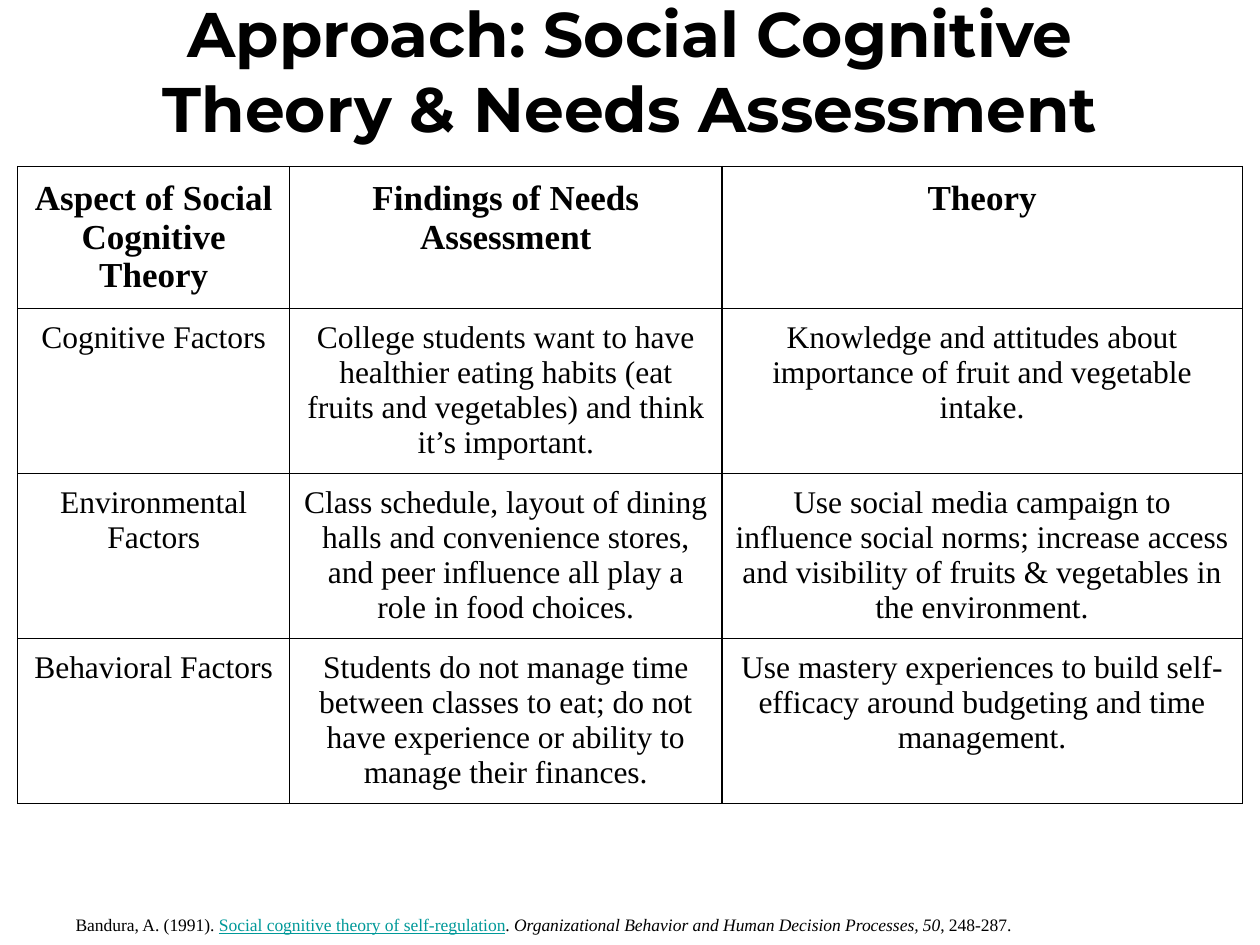
from lxml.etree import SubElement
from pptx import Presentation
from pptx.dml.color import RGBColor
from pptx.enum.text import MSO_ANCHOR, MSO_AUTO_SIZE, PP_ALIGN
from pptx.oxml.ns import qn
from pptx.util import Inches, Pt

COLORS = {"text": "000000", "link": "009999"}
SERIF = "Times New Roman"
COLUMN_WIDTHS = [2.16, 3.43, 4.13]
ROW_HEIGHTS = [1.12, 1.31, 1.31, 1.31]
ROWS = [
    ["Aspect of Social Cognitive Theory", "Findings of Needs Assessment", "Theory"],
    ["Cognitive Factors",
     "College students want to have healthier eating habits (eat fruits and vegetables) "
     "and think it’s important.",
     "Knowledge and attitudes about importance of fruit and vegetable intake."],
    ["Environmental Factors",
     "Class schedule, layout of dining halls and convenience stores, and peer influence "
     "all play a role in food choices.",
     "Use social media campaign to influence social norms; increase access and visibility "
     "of fruits & vegetables in the environment."],
    ["Behavioral Factors",
     "Students do not manage time between classes to eat; do not have experience or "
     "ability to manage their finances.",
     "Use mastery experiences to build self-efficacy around budgeting and time management."],
]
CITATION = [
    ("Bandura, A. (1991). ", "text", False),
    ("Social cognitive theory of self-regulation", "link", False),
    (". ", "text", False),
    ("Organizational Behavior and Human Decision Processes, 50", "text", True),
    (", 248-287.", "text", False),
]


def set_font(font, name, size, bold=False, color="text"):
    font.name, font.size, font.bold = name, Pt(size), bold
    font.color.rgb = RGBColor.from_string(COLORS[color])


def add_borders(cell):
    properties = cell._tc.get_or_add_tcPr()
    for position, side in enumerate(("lnL", "lnR", "lnT", "lnB")):
        line = properties.makeelement(qn(f"a:{side}"), {"w": str(Pt(0.75))})
        fill = SubElement(line, qn("a:solidFill"))
        SubElement(fill, qn("a:srgbClr"), val=COLORS["text"])
        properties.insert(position, line)


presentation = Presentation()
presentation.slide_width, presentation.slide_height = Inches(10), Inches(7.5)
slide = presentation.slides.add_slide(presentation.slide_layouts[1])

title = slide.shapes.title
title.left, title.top = Inches(0.5), Inches(0.05)
title.width, title.height = Inches(9), Inches(1.01)
title.text_frame.auto_size = MSO_AUTO_SIZE.NONE
title.text_frame.vertical_anchor = MSO_ANCHOR.MIDDLE
paragraph = title.text_frame.paragraphs[0]
paragraph.text = "Approach: Social Cognitive Theory & Needs Assessment"
paragraph.alignment = PP_ALIGN.CENTER
set_font(paragraph.font, "Montserrat", 36, bold=True)

table = slide.shapes.add_table(
    len(ROWS), len(COLUMN_WIDTHS), Inches(0.14), Inches(1.32),
    Inches(sum(COLUMN_WIDTHS)), Inches(sum(ROW_HEIGHTS))).table
table.first_row = table.horz_banding = False
for column, width in zip(table.columns, COLUMN_WIDTHS):
    column.width = Inches(width)
for row_index, (row, height, texts) in enumerate(zip(table.rows, ROW_HEIGHTS, ROWS)):
    row.height = Inches(height)
    is_header = row_index == 0
    for cell, text in zip(row.cells, texts):
        cell.margin_left = cell.margin_right = Inches(0.1)
        cell.margin_top = cell.margin_bottom = Inches(0.1)
        cell.fill.background()
        add_borders(cell)
        paragraph = cell.text_frame.paragraphs[0]
        paragraph.text = text
        paragraph.alignment = PP_ALIGN.CENTER
        set_font(paragraph.font, SERIF, 20 if is_header else 18, bold=is_header)

citation = slide.placeholders[1]
citation.left, citation.top = Inches(0.5), Inches(7.19)
citation.width, citation.height = Inches(9), Inches(0.3)
citation.text_frame.auto_size = MSO_AUTO_SIZE.NONE
citation.text_frame.vertical_anchor = MSO_ANCHOR.MIDDLE
paragraph = citation.text_frame.paragraphs[0]
paragraph.space_before = Pt(0)
properties = paragraph._p.get_or_add_pPr()
properties.set("marL", "0")
properties.set("indent", "0")
SubElement(properties, qn("a:buNone"))
for text, color, italic in CITATION:
    run = paragraph.add_run()
    run.text = text
    set_font(run.font, SERIF, 10, color=color)
    run.font.italic = italic
    run.font.underline = color == "link"

presentation.save("out.pptx")
